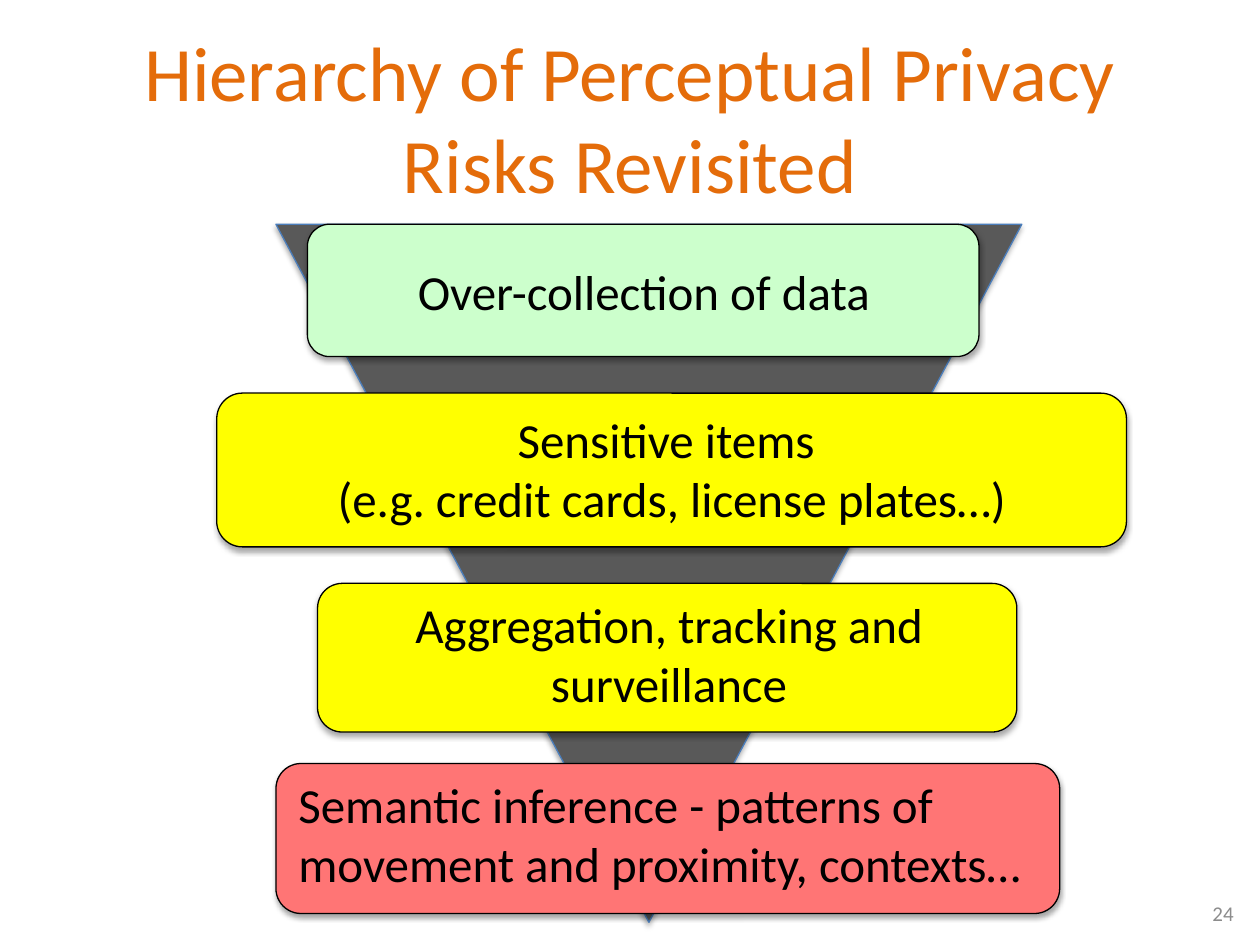
from lxml.etree import SubElement
from pptx import Presentation
from pptx.dml.color import RGBColor
from pptx.enum.shapes import MSO_SHAPE
from pptx.enum.text import MSO_ANCHOR, MSO_AUTO_SIZE, PP_ALIGN
from pptx.oxml.ns import qn
from pptx.util import Inches, Pt

ORANGE = RGBColor(0xE4, 0x6C, 0x0A)
DARK_GRAY = RGBColor(0x59, 0x59, 0x59)
NUMBER_GRAY = RGBColor(0x8C, 0x8C, 0x8C)
BLUE = RGBColor(0x4B, 0x7E, 0xBC)
BLACK = RGBColor(0, 0, 0)
GREEN = RGBColor(0xCC, 0xFF, 0xCC)
YELLOW = RGBColor(0xFF, 0xFF, 0x00)
RED = RGBColor(0xFF, 0x75, 0x75)

deck = Presentation()
deck.slide_width, deck.slide_height = Inches(10), Inches(7.5)
page = deck.slides.add_slide(deck.slide_layouts[5])


def add_block(kind, place, fill, line):
    """Add a filled shape with a thin outline and a soft shadow below."""
    shape = page.shapes.add_shape(kind, *map(Inches, place))
    shape.fill.solid()
    shape.fill.fore_color.rgb = fill
    shape.line.color.rgb = line
    shape.line.width = Pt(0.75)
    shape.shadow.inherit = False
    effects = shape._element.spPr.find(qn("a:effectLst"))
    shadow = SubElement(effects, qn("a:outerShdw"), blurRad=str(Pt(3.1)),
                        dist=str(Pt(1.8)), dir="5400000", rotWithShape="0")
    color = SubElement(shadow, qn("a:srgbClr"), val="000000")
    SubElement(color, qn("a:alpha"), val="35000")
    return shape


def write(frame, text, size, color, align):
    """Fill a text frame and format every paragraph alike."""
    frame.word_wrap = True
    frame.text = text
    for para in frame.paragraphs:
        para.alignment = align
        for span in para.runs:
            span.font.name = "Calibri"
            span.font.size = Pt(size)
            span.font.color.rgb = color


# Inverted triangle behind the levels
triangle = add_block(MSO_SHAPE.ISOSCELES_TRIANGLE, (2.19, 1.78, 5.92, 5.54),
                     DARK_GRAY, BLUE)
triangle.rotation = 180

# Title
title = page.shapes.title
title.left, title.top = Inches(0.5), Inches(0.3)
title.width, title.height = Inches(9), Inches(1.25)
write(title.text_frame, "Hierarchy of Perceptual Privacy Risks Revisited",
      44, ORANGE, PP_ALIGN.CENTER)
title.text_frame.auto_size = MSO_AUTO_SIZE.NONE
title.text_frame.vertical_anchor = MSO_ANCHOR.MIDDLE

# Slide number
number = page.shapes.add_textbox(Inches(7.56), Inches(7.05),
                                 Inches(2.33), Inches(0.4))
write(number.text_frame, "24", 12, NUMBER_GRAY, PP_ALIGN.RIGHT)
number.text_frame.vertical_anchor = MSO_ANCHOR.MIDDLE

# Risk levels: box place, fill, text place, text, alignment
levels = [
    ((2.44, 1.78, 5.33, 1.05), GREEN, (2.82, 2.03, 4.58, 0.57),
     "Over-collection of data", PP_ALIGN.CENTER),
    ((1.72, 3.12, 7.22, 1.22), YELLOW, (1.72, 3.2, 7.22, 1.04),
     "Sensitive items \n(e.g. credit cards, license plates…)",
     PP_ALIGN.CENTER),
    ((2.52, 4.63, 5.55, 1.18), YELLOW, (2.56, 4.67, 5.5, 1.51),
     "Aggregation, tracking and surveillance", PP_ALIGN.CENTER),
    ((2.19, 6.06, 6.22, 1.19), RED, (2.27, 6.1, 6.09, 1.04),
     "Semantic inference - patterns of movement and proximity, contexts…",
     PP_ALIGN.LEFT),
]
for box_place, fill, text_place, text, align in levels:
    add_block(MSO_SHAPE.ROUNDED_RECTANGLE, box_place, fill, BLACK)
    label = page.shapes.add_textbox(*map(Inches, text_place))
    write(label.text_frame, text, 28, BLACK, align)
    label.text_frame.auto_size = MSO_AUTO_SIZE.SHAPE_TO_FIT_TEXT

# The title lies above the triangle
triangle._element.addnext(title._element)

deck.save("out.pptx")
